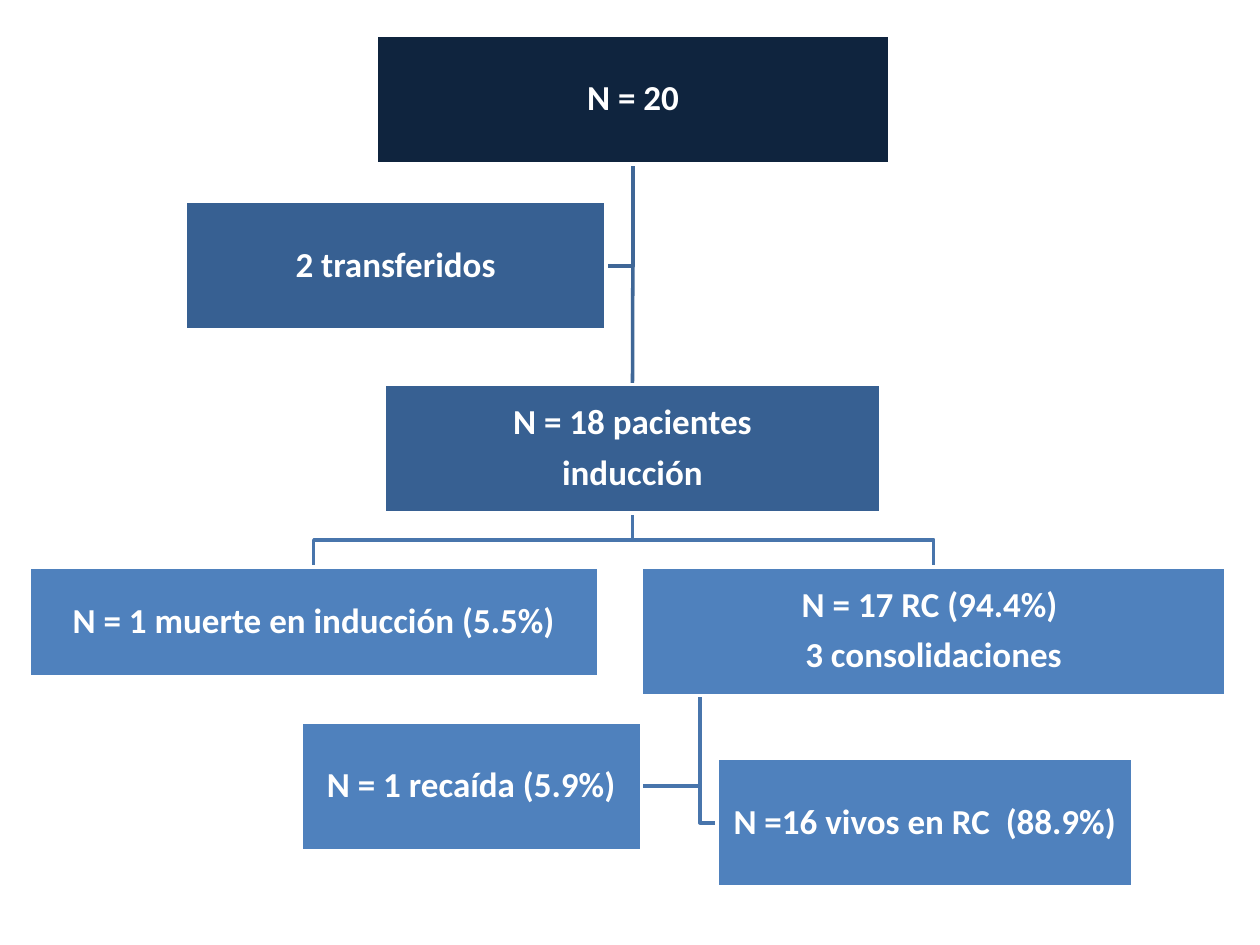
import pptx
import pptx.util
import pptx.dml.color
import pptx.enum.shapes
import pptx.enum.text
import pptx.oxml.ns
import lxml.etree

COLORS = {
    "navy": "0F243E", "steel": "376092", "blue": "4F81BD", "white": "FFFFFF",
    "upper_line": "3F6797", "lower_line": "4875AC",
}
TALL, SHORT = 13.6, 11.6
ROW_3 = 60

# name: (lines, fill, left %, top %, width %, height %)
STAGES = {
    "enrolled": (["N = 20"], "navy", 29.9, 3.73, 40.7, TALL),
    "induction": (["N = 18 pacientes", " inducción "], "steel", 30.5, 40.67, 39.4, TALL),
    "death": (["N = 1 muerte en inducción (5.5%)"], "blue", 2.3, ROW_3, 45.2, SHORT),
    "remission": (["N = 17 RC (94.4%) ", "3 consolidaciones"], "blue", 50.9, ROW_3, 46.4, TALL),
    "relapse": (["N = 1 recaída (5.9%)"], "blue", 23.9, 76.4, 27, TALL),
    "alive": (["N =16 vivos en RC  (88.9%)"], "blue", 56.9, 80.27, 33, TALL),
    "transferred": (["2 transferidos"], "steel", 14.7, 21.33, 33.4, TALL),
}
SPINE_SHARE = 0.1

deck = pptx.Presentation()
deck.slide_width = pptx.util.Inches(10)
deck.slide_height = pptx.util.Inches(7.5)
shapes = deck.slides.add_slide(deck.slide_layouts[6]).shapes


def rgb(color):
    return pptx.dml.color.RGBColor.from_string(COLORS[color])


def across(share):
    return round(deck.slide_width * share / 100)


def down(share):
    return round(deck.slide_height * share / 100)


def anchor(stage, x_share, y_share):
    left, top, width, height = STAGES[stage][2:]
    return across(left + width * x_share), down(top + height * y_share)


def style_line(shape, color):
    shape.line.color.rgb = rgb(color)
    shape.line.width = pptx.util.Pt(2)


def add_bend(points, color):
    builder = shapes.build_freeform(*points[0])
    builder.add_line_segments(points[1:], close=False)
    bend = builder.convert_to_shape()
    bend.shadow.inherit = False
    bend.fill.background()
    style_line(bend, color)


def add_side_branch(start, end, color):
    add_bend([start, (start[0], end[1]), end], color)


def add_fork(start, end, color):
    middle = (start[1] + end[1]) // 2
    add_bend([start, (start[0], middle), (end[0], middle), end], color)


def add_stage(lines, fill, left, top, width, height):
    box = shapes.add_shape(
        pptx.enum.shapes.MSO_SHAPE.RECTANGLE,
        across(left), down(top), across(width), down(height))
    box.shadow.inherit = False
    box.fill.solid()
    box.fill.fore_color.rgb = rgb(fill)
    style_line(box, "white")
    frame = box.text_frame
    frame.word_wrap = True
    frame.vertical_anchor = pptx.enum.text.MSO_ANCHOR.MIDDLE
    frame.margin_left = frame.margin_right = pptx.util.Inches(0.01)
    frame.margin_top = frame.margin_bottom = pptx.util.Inches(0.01)
    for index, line in enumerate(lines):
        paragraph = frame.add_paragraph() if index else frame.paragraphs[0]
        paragraph.text = line
        paragraph.alignment = pptx.enum.text.PP_ALIGN.CENTER
        paragraph.line_spacing = 0.9
        paragraph.space_after = pptx.util.Pt(7)
        paragraph.font.name = "Calibri"
        paragraph.font.size = pptx.util.Pt(20)
        paragraph.font.bold = True
        paragraph.font.color.rgb = rgb("white")
    return box


enrolled_bottom = anchor("enrolled", 0.5, 1)
induction_bottom = anchor("induction", 0.5, 1)
remission_spine = anchor("remission", SPINE_SHARE, 1)

add_side_branch(enrolled_bottom, anchor("transferred", 1, 0.5), "upper_line")
add_side_branch(remission_spine, anchor("alive", 0, 0.5), "lower_line")
add_side_branch(remission_spine, anchor("relapse", 1, 0.5), "lower_line")
for outcome in ("remission", "death"):
    add_fork(induction_bottom, anchor(outcome, 0.5, 0), "lower_line")

trunk = shapes.add_connector(
    pptx.enum.shapes.MSO_CONNECTOR.STRAIGHT,
    *enrolled_bottom, *anchor("induction", 0.5, 0))
style_line(trunk, "upper_line")
lxml.etree.SubElement(trunk._element.spPr, pptx.oxml.ns.qn("a:effectLst"))

boxes = {stage: add_stage(*details) for stage, details in STAGES.items()}
trunk.begin_connect(boxes["enrolled"], 2)
trunk.end_connect(boxes["induction"], 0)

deck.save("out.pptx")
